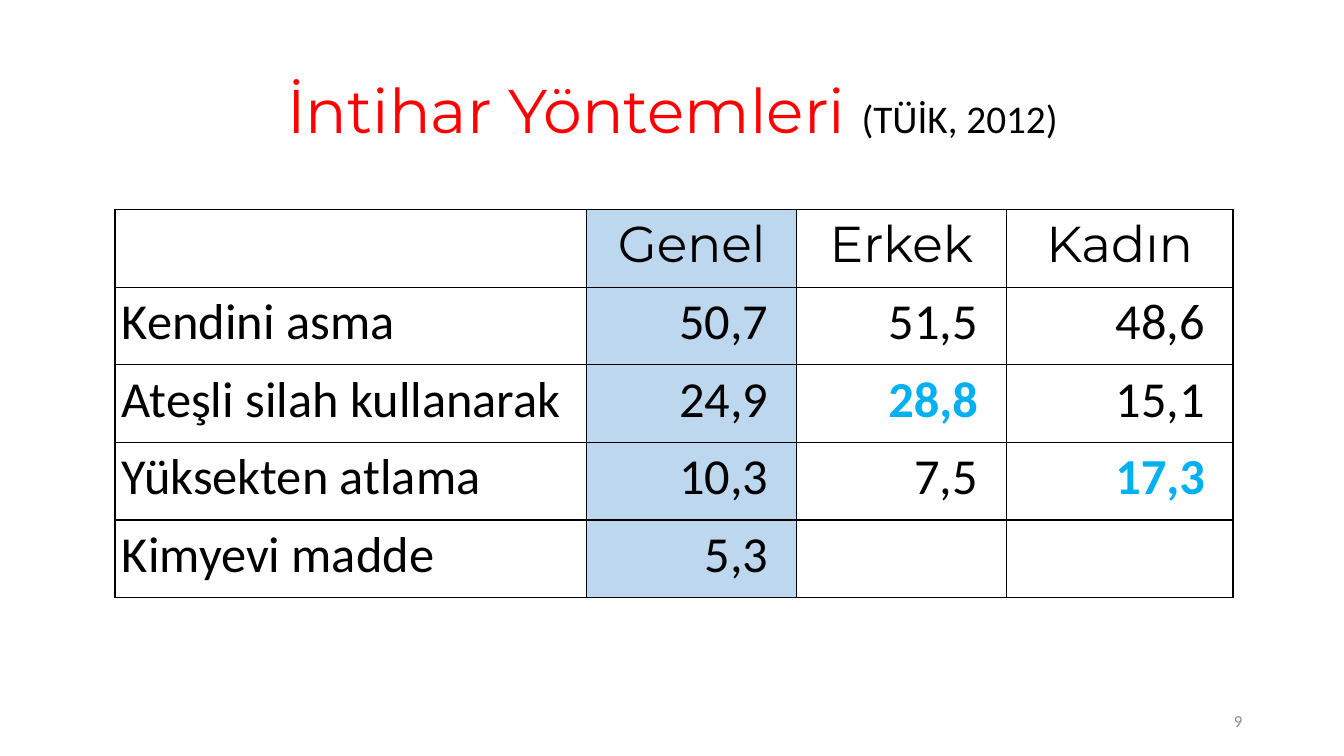
from dataclasses import dataclass

from lxml.etree import SubElement
from pptx import Presentation
from pptx.dml.color import RGBColor
from pptx.enum.text import MSO_ANCHOR, PP_ALIGN
from pptx.oxml.ns import qn
from pptx.util import Inches, Pt


@dataclass(frozen=True)
class Theme:
    head: str = "Montserrat"
    body: str = "Calibri"
    black: str = "000000"
    red: str = "FF0000"
    blue: str = "00B0F0"
    pale: str = "BDD7EE"
    gray: str = "8C8C8C"
    title: int = 44
    cell: int = 36
    source: int = 28
    small: int = 12


class Deck:
    """Holds the theme and the current slide, and adds elements to it."""

    def __init__(self, theme, slide):
        self.theme = theme
        self.slide = slide

    def style(self, font, name, size, color, bold=False):
        font.name = name
        font.size = Pt(size)
        font.bold = bold
        font.color.rgb = RGBColor.from_string(color)

    def text(self, box, align, runs, space=1.0):
        shape = self.slide.shapes.add_textbox(*map(Inches, box))
        frame = shape.text_frame
        frame.word_wrap = True
        frame.vertical_anchor = MSO_ANCHOR.MIDDLE
        para = frame.paragraphs[0]
        para.alignment = align
        para.line_spacing = space
        for words, *look in runs:
            run = para.add_run()
            run.text = words
            self.style(run.font, *look)

    def border(self, cell):
        props = cell._tc.get_or_add_tcPr()
        for side in ("lnL", "lnR", "lnT", "lnB"):
            line = SubElement(props, qn(f"a:{side}"), w=str(Pt(1)))
            fill = SubElement(line, qn("a:solidFill"))
            SubElement(fill, qn("a:srgbClr"), val=self.theme.black)

    def cell(self, cell, words, row, col, bold):
        theme = self.theme
        self.border(cell)
        if col == 1:
            cell.fill.solid()
            cell.fill.fore_color.rgb = RGBColor.from_string(theme.pale)
        else:
            cell.fill.background()
        number = row > 0 and col > 0
        cell.margin_left = Inches(0.07)
        cell.margin_right = Inches(0.28 if number else 0.07)
        cell.margin_top = cell.margin_bottom = 0
        para = cell.text_frame.paragraphs[0]
        para.text = words
        para.line_spacing = 1.07
        if number:
            para.alignment = PP_ALIGN.RIGHT
        else:
            para.alignment = PP_ALIGN.LEFT if row else PP_ALIGN.CENTER
        name = theme.body if row else theme.head
        color = theme.blue if bold else theme.black
        self.style(para.font, name, theme.cell, color, bold)

    def table(self, left, top, widths, height, rows, marked):
        box = (left, top, sum(widths), height * len(rows))
        shape = self.slide.shapes.add_table(len(rows), len(widths), *map(Inches, box))
        table = shape.table
        table.first_row = table.horz_banding = False
        for column, width in zip(table.columns, widths):
            column.width = Inches(width)
        for r, row in enumerate(rows):
            table.rows[r].height = Inches(height)
            for c, words in enumerate(row):
                self.cell(table.cell(r, c), words, r, c, (r, c) in marked)


def main():
    show = Presentation()
    show.slide_width, show.slide_height = Inches(13.33), Inches(7.5)
    theme = Theme()
    deck = Deck(theme, show.slides.add_slide(show.slide_layouts[6]))
    deck.text((0.92, 0.4, 11.5, 1.45), PP_ALIGN.CENTER, [
        ("İntihar Yöntemleri ", theme.head, theme.title, theme.red),
        ("(TÜİK, 2012)", theme.body, theme.source, theme.black),
    ], 0.9)
    rows = [
        ("", "Genel", "Erkek", "Kadın"),
        ("Kendini asma", "50,7", "51,5", "48,6"),
        ("Ateşli silah kullanarak", "24,9", "28,8", "15,1"),
        ("Yüksekten atlama", "10,3", "7,5", "17,3"),
        ("Kimyevi madde", "5,3", "", ""),
    ]
    deck.table(1.14, 2.08, (4.68, 2.08, 2.08, 2.25), 0.77, rows, {(2, 2), (3, 3)})
    deck.text((9.42, 6.95, 3, 0.4), PP_ALIGN.RIGHT, [
        ("9", theme.body, theme.small, theme.gray),
    ])
    show.save("out.pptx")


if __name__ == "__main__":
    main()
